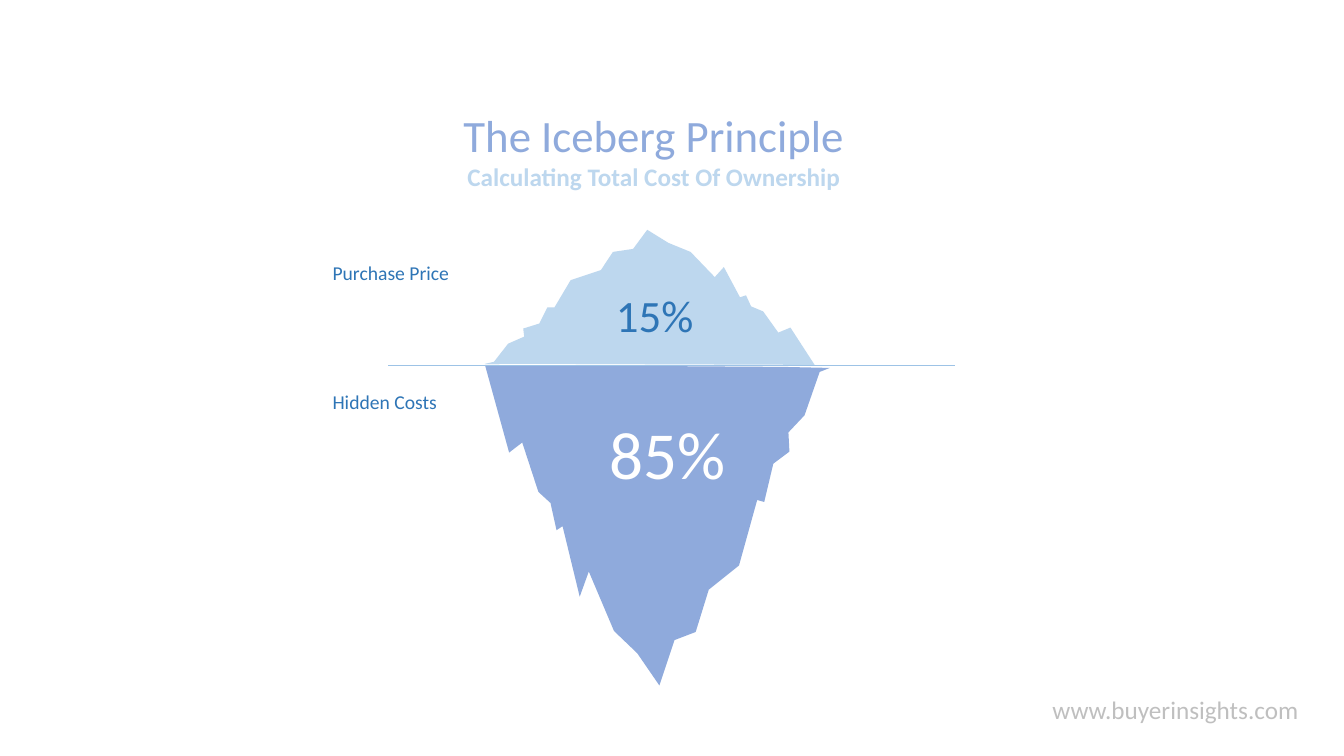
from dataclasses import dataclass

from lxml.etree import SubElement
from pptx import Presentation
from pptx.dml.color import RGBColor as Color
from pptx.enum.shapes import MSO_CONNECTOR as Connector
from pptx.enum.text import MSO_ANCHOR as Anchor, MSO_AUTO_SIZE as AutoSize, PP_ALIGN as Align
from pptx.oxml.ns import qn
from pptx.util import Inches, Pt


@dataclass(frozen=True)
class Theme:
    font: str = "Calibri"
    tip: str = "BDD7EE"
    depth: str = "8FAADC"
    label: str = "2E75B6"
    waterline: str = "9DC3E6"
    footer: str = "BFBFBF"
    white: str = "FFFFFF"
    label_size: int = 14
    body_size: int = 18
    heading_size: int = 32
    figure_size: int = 48


TIP_OUTLINE = [
    (5.25, 3.61), (8.08, 3.62), (7.84, 3.25), (7.72, 3.3), (7.57, 3.09),
    (7.45, 3.04), (7.4, 2.93), (7.34, 2.95), (7.18, 2.65), (7.09, 2.75),
    (6.85, 2.5), (6.63, 2.41), (6.42, 2.28), (6.28, 2.47), (6.08, 2.5),
    (5.96, 2.68), (5.66, 2.78), (5.5, 3.05), (5.43, 3.05), (5.35, 3.21),
    (5.19, 3.26), (5.2, 3.34), (5.04, 3.41), (4.9, 3.59), (4.81, 3.61),
]
DEPTH_OUTLINE = [
    (7.77, 3.64), (4.81, 3.62), (5.05, 4.49), (5.18, 4.39), (5.34, 4.88),
    (5.46, 4.99), (5.52, 5.26), (5.58, 5.22), (5.75, 5.92), (5.84, 5.67),
    (6.09, 6.26), (6.32, 6.48), (6.54, 6.8), (6.69, 6.35), (6.9, 6.27),
    (7.03, 5.85), (7.33, 5.61), (7.51, 4.96), (7.58, 4.98), (7.67, 4.6),
    (7.83, 4.48), (7.82, 4.29), (7.98, 4.12), (8.13, 3.69), (8.23, 3.65),
]


class SlideBuilder:
    def __init__(self, slide, theme):
        self.slide = slide
        self.theme = theme

    def style(self, para, size, color, bold=False):
        para.font.name = self.theme.font
        para.font.size = Pt(size)
        para.font.bold = bold
        para.font.color.rgb = Color.from_string(color)

    def title(self, heading, subtitle, left, top, width, height):
        box = self.slide.shapes.title
        box.left, box.top = Inches(left), Inches(top)
        box.width, box.height = Inches(width), Inches(height)
        frame = box.text_frame
        frame.word_wrap = True
        frame.auto_size = AutoSize.NONE
        frame.vertical_anchor = Anchor.TOP
        frame.text = f"{heading}\n{subtitle}"
        for para in frame.paragraphs:
            para.alignment = Align.CENTER
            para.space_before = Pt(0)
        first, second = frame.paragraphs
        self.style(first, self.theme.heading_size, self.theme.depth)
        self.style(second, self.theme.body_size, self.theme.tip, bold=True)

    def text(self, words, left, top, width, height, size, color):
        box = self.slide.shapes.add_textbox(
            Inches(left), Inches(top), Inches(width), Inches(height))
        frame = box.text_frame
        frame.word_wrap = True
        frame.text = words
        self.style(frame.paragraphs[0], size, color)

    def outline(self, points, color):
        corners = [(Inches(x), Inches(y)) for x, y in points]
        builder = self.slide.shapes.build_freeform(*corners[0])
        builder.add_line_segments(corners[1:], close=True)
        shape = builder.convert_to_shape()
        shape.shadow.inherit = False
        shape.fill.solid()
        shape.fill.fore_color.rgb = Color.from_string(color)
        shape.line.fill.background()

    def horizontal_line(self, start, end, y, color, weight):
        line = self.slide.shapes.add_connector(
            Connector.STRAIGHT, Inches(start), Inches(y), Inches(end), Inches(y))
        line.line.color.rgb = Color.from_string(color)
        line.line.width = Pt(weight)
        SubElement(line._element.spPr, qn("a:effectLst"))


def main():
    deck = Presentation()
    deck.slide_width, deck.slide_height = Inches(13.33), Inches(7.5)
    theme = Theme()
    page = SlideBuilder(deck.slides.add_slide(deck.slide_layouts[5]), theme)

    page.outline(TIP_OUTLINE, theme.tip)
    page.outline(DEPTH_OUTLINE, theme.depth)
    page.horizontal_line(3.85, 9.47, 3.62, theme.waterline, 0.5)

    for words, top in (("Hidden Costs", 3.82), ("Purchase Price", 2.54)):
        page.text(words, 3.2, top, 1.6, 0.34, theme.label_size, theme.label)

    page.title("The Iceberg Principle", "Calculating Total Cost Of Ownership",
               4.41, 1.02, 4.15, 0.94)
    page.text("15%", 6.01, 2.81, 0.99, 0.64, theme.heading_size, theme.label)
    page.text("85%", 5.95, 4.04, 1.6, 0.91, theme.figure_size, theme.white)
    page.text("www.buyerinsights.com", 10.34, 6.84, 2.75, 0.4,
              theme.body_size, theme.footer)

    deck.save("out.pptx")


if __name__ == "__main__":
    main()
